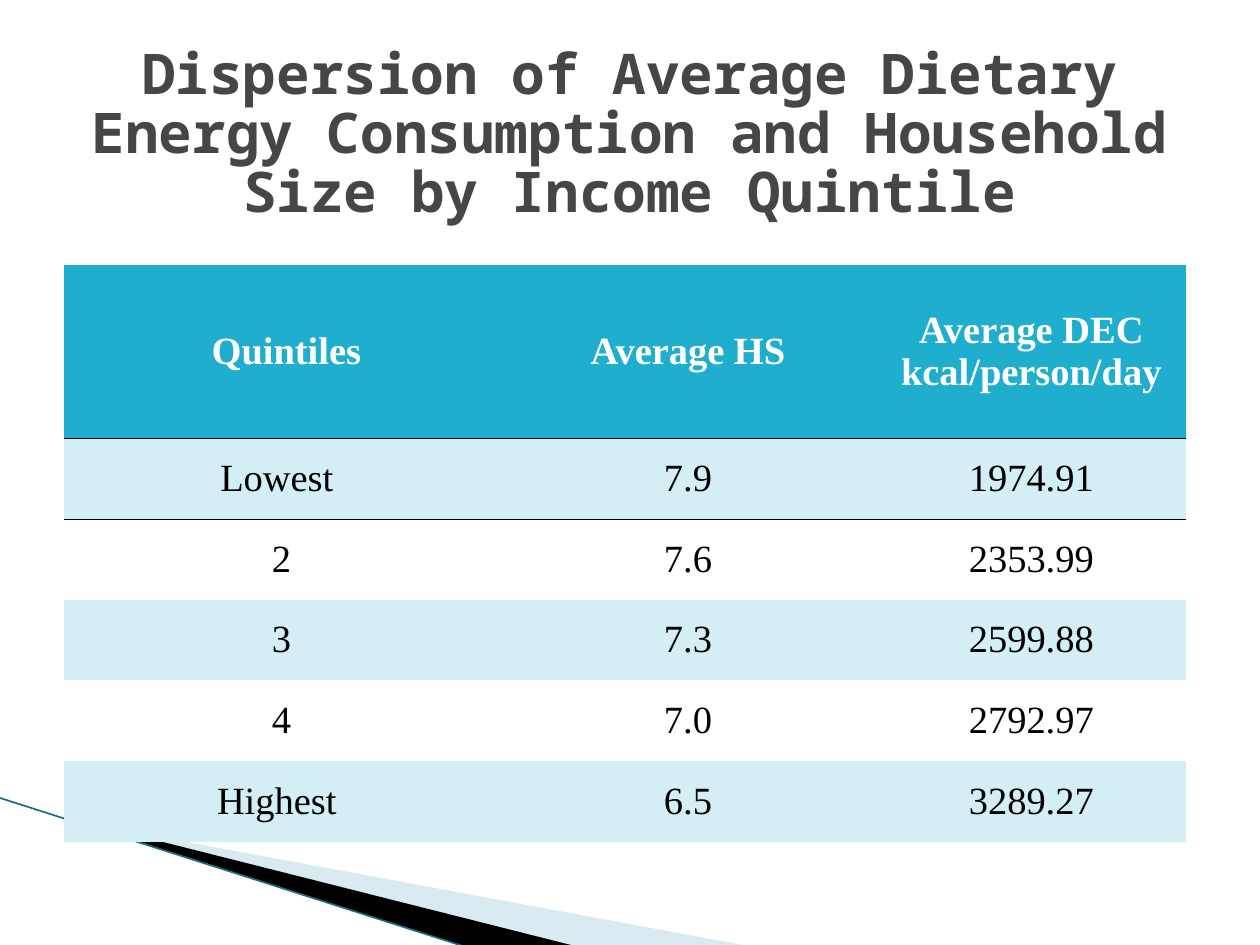
"""Slide with a table of dietary energy and household size by income quintile."""
from dataclasses import dataclass
from typing import Optional

from lxml import etree
from pptx import Presentation
from pptx.dml.color import RGBColor
from pptx.enum.shapes import MSO_CONNECTOR
from pptx.enum.text import MSO_ANCHOR, MSO_AUTO_SIZE, PP_ALIGN
from pptx.oxml.ns import qn
from pptx.util import Inches, Pt

CENTER = PP_ALIGN.CENTER
MIDDLE = MSO_ANCHOR.MIDDLE
NO_AUTOFIT = MSO_AUTO_SIZE.NONE
STRAIGHT = MSO_CONNECTOR.STRAIGHT
TITLE_ONLY = 5
NO_STYLE = "{2D5ABB26-0587-4C30-8999-92F81FD0307C}"

WIDTH, HEIGHT = Inches(10), Inches(7.5)
TITLE = ("Dispersion of Average Dietary Energy Consumption "
         "and Household Size by Income Quintile")
QUINTILE_ROWS = [
    (" Quintiles", "Average HS", "Average DEC kcal/person/day"),
    ("Lowest ", "7.9", "1974.91"),
    ("2", "7.6", "2353.99"),
    ("3", "7.3", "2599.88"),
    ("4", "7.0", "2792.97"),
    ("Highest ", "6.5", "3289.27"),
]
COLUMN_WIDTHS = (3.45, 3, 2.45)
HEADER_HEIGHT, ROW_HEIGHT = 1.38, 0.64


@dataclass(frozen=True)
class Wedge:
    """A filled corner shape with its points in inches."""
    points: tuple
    color: str
    opacity: Optional[int] = None


WEDGES = (
    Wedge(((0.55, 6.51), (5.95, 7.51), (4.56, 7.51), (0.55, 6.5)), "A0CBDC", 40),
    Wedge(((0.53, 6.49), (4.57, 7.51), (3.72, 7.52), (0.54, 6.5)), "000000"),
)


def rgb(color: str) -> RGBColor:
    """Turn a hex string into a colour."""
    return RGBColor.from_string(color)


def draw_wedge(slide, wedge: Wedge) -> None:
    """Draw one wedge of the corner decoration."""
    start, *rest = [(Inches(x), Inches(y)) for x, y in wedge.points]
    builder = slide.shapes.build_freeform(*start)
    builder.add_line_segments(rest, close=True)
    shape = builder.convert_to_shape()
    shape.shadow.inherit = False
    shape.line.fill.background()
    shape.fill.solid()
    shape.fill.fore_color.rgb = rgb(wedge.color)
    if wedge.opacity is not None:
        fill_color = shape.fill._xPr.find(f".//{qn('a:srgbClr')}")
        etree.SubElement(fill_color, qn("a:alpha"), val=str(wedge.opacity * 1000))


def draw_edge(slide) -> None:
    """Draw the thin line along the corner decoration."""
    edge = slide.shapes.add_connector(
        STRAIGHT, Inches(-0.01), Inches(6.33), Inches(3.71), Inches(7.52))
    edge.line.color.rgb = rgb("1A6E82")
    edge.line.width = Pt(0.95)
    etree.SubElement(edge._element.spPr, qn("a:effectLst"))


def add_border(cell, side: str) -> None:
    """Give one side of a cell a thin black border."""
    border = etree.Element(qn(f"a:{side}"), w=str(Pt(0.5)))
    fill = etree.SubElement(border, qn("a:solidFill"))
    etree.SubElement(fill, qn("a:srgbClr"), val="000000")
    cell._tc.get_or_add_tcPr().insert(0, border)


def fill_cell(cell, text: str, row: int) -> None:
    """Write and format one cell according to its row."""
    is_header = row == 0
    cell.margin_left = cell.margin_right = cell.margin_top = cell.margin_bottom = 0
    cell.vertical_anchor = MIDDLE
    cell.text = text
    paragraph = cell.text_frame.paragraphs[0]
    paragraph.alignment = CENTER
    font = paragraph.font
    font.name, font.size, font.bold = "Times New Roman", Pt(22), is_header
    font.color.rgb = rgb("FFFFFF" if is_header else "000000")
    if is_header or row % 2:
        cell.fill.solid()
        cell.fill.fore_color.rgb = rgb("1FAECD" if is_header else "D3EEF5")
    else:
        cell.fill.background()
    if row < 2:
        add_border(cell, "lnB" if is_header else "lnT")


def draw_table(slide) -> None:
    """Draw the table of quintiles."""
    heights = [HEADER_HEIGHT] + [ROW_HEIGHT] * (len(QUINTILE_ROWS) - 1)
    table = slide.shapes.add_table(
        len(heights), len(COLUMN_WIDTHS), Inches(0.51), Inches(2.1),
        Inches(sum(COLUMN_WIDTHS)), Inches(sum(heights))).table
    table._tbl.tblPr.find(qn("a:tableStyleId")).text = NO_STYLE
    table.horz_banding = False
    for column, width in zip(table.columns, COLUMN_WIDTHS):
        column.width = Inches(width)
    for index, (row, height, texts) in enumerate(
            zip(table.rows, heights, QUINTILE_ROWS)):
        row.height = Inches(height)
        for cell, text in zip(row.cells, texts):
            fill_cell(cell, text, index)


def write_title(slide) -> None:
    """Place and format the slide title."""
    title = slide.shapes.title
    title.left, title.top = int(WIDTH * 0.05), int(HEIGHT * 0.04)
    title.width, title.height = int(WIDTH * 0.9), Inches(1.56)
    frame = title.text_frame
    frame.text = TITLE
    frame.word_wrap = True
    frame.auto_size = NO_AUTOFIT
    frame.vertical_anchor = MIDDLE
    paragraph = frame.paragraphs[0]
    paragraph.alignment = CENTER
    paragraph.line_spacing = 0.88
    font = paragraph.font
    font.name, font.size, font.bold = "Noto Sans Mono", Pt(32), True
    font.color.rgb = rgb("464646")


def main() -> None:
    """Build and save the slide."""
    deck = Presentation()
    deck.slide_width, deck.slide_height = WIDTH, HEIGHT
    slide = deck.slides.add_slide(deck.slide_layouts[TITLE_ONLY])
    for wedge in WEDGES:
        draw_wedge(slide, wedge)
    draw_edge(slide)
    draw_table(slide)
    write_title(slide)
    deck.save("out.pptx")


if __name__ == "__main__":
    main()
